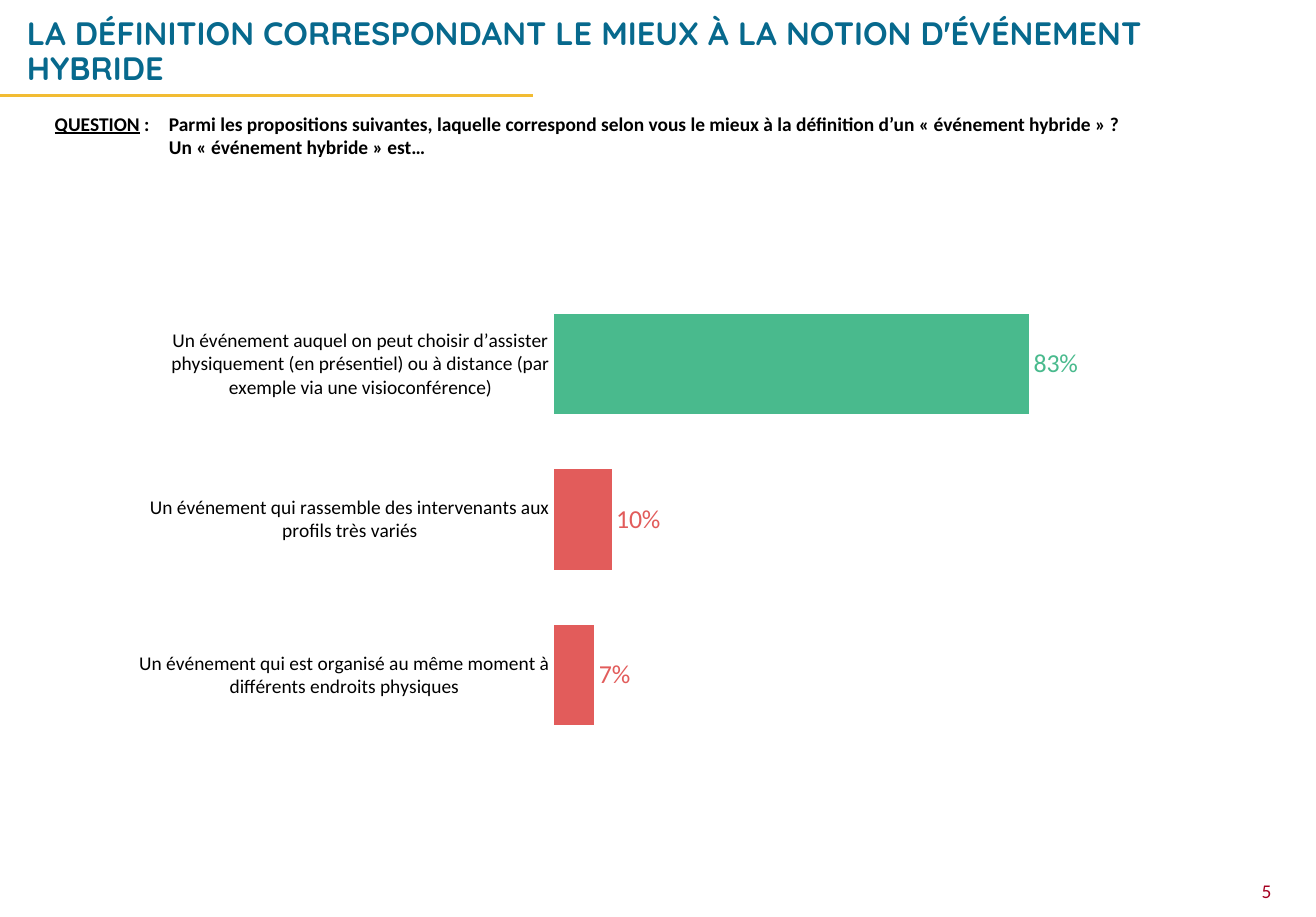
from lxml import etree
from pptx import Presentation
from pptx.chart.data import CategoryChartData
from pptx.dml.color import RGBColor
from pptx.enum.chart import XL_CHART_TYPE, XL_LABEL_POSITION, XL_TICK_MARK
from pptx.enum.shapes import MSO_CONNECTOR
from pptx.enum.text import MSO_ANCHOR, MSO_AUTO_SIZE, PP_ALIGN
from pptx.oxml.ns import qn
from pptx.util import Inches, Pt

BAR = XL_CHART_TYPE.BAR_CLUSTERED
OUTSIDE = XL_LABEL_POSITION.OUTSIDE_END
NO_TICK = XL_TICK_MARK.NONE
STRAIGHT = MSO_CONNECTOR.STRAIGHT
MIDDLE = MSO_ANCHOR.MIDDLE
NO_FIT = MSO_AUTO_SIZE.NONE
LEFT, CENTER, JUSTIFY = PP_ALIGN.LEFT, PP_ALIGN.CENTER, PP_ALIGN.JUSTIFY

COLORS = {
    "title": "07698D",
    "rule": "F2BC33",
    "text": "000000",
    "page": "A50021",
    "right": "49BA8D",
    "wrong": "E25C5B",
}
ANSWERS = [
    ("Un événement auquel on peut choisir d’assister physiquement (en présentiel) "
     "ou à distance (par exemple via une visioconférence)", 0.83, "right"),
    ("Un événement qui rassemble des intervenants aux profils très variés", 0.10, "wrong"),
    ("Un événement qui est organisé au même moment à différents endroits physiques",
     0.07, "wrong"),
]


def color(name):
    return RGBColor.from_string(COLORS[name])


def style(font, size, name, face="Calibri", bold=False):
    font.size = Pt(size)
    font.name = face
    font.bold = bold
    font.color.rgb = color(name)


def indent(para, margin, first):
    props = para._p.get_or_add_pPr()
    props.set("marL", str(Inches(margin)))
    props.set("indent", str(Inches(first)))


def add_box(slide, left, top, width, height):
    box = slide.shapes.add_textbox(
        Inches(left), Inches(top), Inches(width), Inches(height))
    box.text_frame.word_wrap = True
    return box.text_frame


def add_title(slide, left, top, width, height):
    title = slide.shapes.title
    title.left, title.top = Inches(left), Inches(top)
    title.width, title.height = Inches(width), Inches(height)
    frame = title.text_frame
    frame.text = "LA DÉFINITION CORRESPONDANT LE MIEUX À LA NOTION D'ÉVÉNEMENT HYBRIDE"
    frame.word_wrap = True
    frame.auto_size = NO_FIT
    frame.vertical_anchor = MIDDLE
    para = frame.paragraphs[0]
    para.alignment = LEFT
    para.line_spacing = 0.9
    style(para.font, 20, "title", "Quicksand", True)


def add_rule(slide, left, top, width):
    rule = slide.shapes.add_connector(
        STRAIGHT, Inches(left), Inches(top), Inches(left + width), Inches(top))
    rule.line.color.rgb = color("rule")
    rule.line.width = Pt(1.5)
    etree.SubElement(rule._element.spPr, qn("a:effectLst"))


def add_question(slide, left, top, width, height):
    frame = add_box(slide, left, top, width, height)
    frame.margin_left = Inches(0.09)
    frame.margin_right = Inches(0.36)
    frame.margin_top = frame.margin_bottom = Inches(0.04)
    ask, lead = frame.paragraphs[0], frame.add_paragraph()
    indent(ask, 0.98, -0.98)
    indent(lead, 0.98, 0)
    head = ask.add_run()
    head.text = "QUESTION"
    head.font.underline = True
    ask.add_run().text = (
        " :\tParmi les propositions suivantes, laquelle correspond selon vous "
        "le mieux à la définition d’un « événement hybride » ?")
    lead.add_run().text = "Un « événement hybride » est…"
    for para in (ask, lead):
        para.alignment = JUSTIFY
        style(para.font, 12, "text", bold=True)


def set_plot(chart, left, top, width, height):
    area = chart._chartSpace.chart.plotArea
    for old in area.findall(qn("c:layout")):
        area.remove(old)
    layout = etree.Element(qn("c:layout"))
    manual = etree.SubElement(layout, qn("c:manualLayout"))
    parts = [("layoutTarget", "inner"), ("xMode", "edge"), ("yMode", "edge"),
             ("x", left), ("y", top), ("w", width), ("h", height)]
    for tag, value in parts:
        etree.SubElement(manual, qn("c:" + tag)).set("val", str(value))
    area.insert(0, layout)


def add_bars(slide, left, top, width, height):
    data = CategoryChartData(number_format="0%")
    data.categories = [label for label, _, _ in ANSWERS]
    data.add_series("Series 1", [value for _, value, _ in ANSWERS])
    chart = slide.shapes.add_chart(
        BAR, Inches(left), Inches(top), Inches(width), Inches(height), data).chart
    chart.has_legend = False
    chart.has_title = False
    style(chart.font, 18, "text")
    set_plot(chart, 0.397, 0, 0.53, 1)

    cats = chart.category_axis
    cats.reverse_order = True
    cats.major_tick_mark = NO_TICK
    cats.format.line.fill.background()
    style(cats.tick_labels.font, 12, "text")
    scale = chart.value_axis
    scale.minimum_scale, scale.maximum_scale = 0, 1
    scale.has_major_gridlines = False
    scale.visible = False

    plot = chart.plots[0]
    plot.gap_width = 55
    plot.vary_by_categories = False
    bars = plot.series[0]
    labels = bars.data_labels
    labels.show_value = True
    labels.number_format = "0%"
    labels.number_format_is_linked = False
    labels.position = OUTSIDE
    for i, (_, _, tone) in enumerate(ANSWERS):
        point = bars.points[i]
        point.format.fill.solid()
        point.format.fill.fore_color.rgb = color(tone)
        style(point.data_label.font, 16, tone)
        point.data_label.position = OUTSIDE


def add_page(slide, left, top, width, height):
    para = add_box(slide, left, top, width, height).paragraphs[0]
    para.add_run().text = "5"
    para.alignment = CENTER
    style(para.font, 12, "page")


def main():
    deck = Presentation()
    deck.slide_width, deck.slide_height = Inches(11.29), Inches(7.87)
    slide = deck.slides.add_slide(deck.slide_layouts[5])
    add_page(slide, 10.57, 7.5, 0.59, 0.3)
    add_rule(slide, 0, 0.82, 4.57)
    add_title(slide, 0.13, 0.09, 10.92, 0.72)
    add_question(slide, 0.38, 0.92, 10.67, 0.69)
    add_bars(slide, 1.08, 2.46, 9.26, 4)
    deck.save("out.pptx")


if __name__ == "__main__":
    main()
